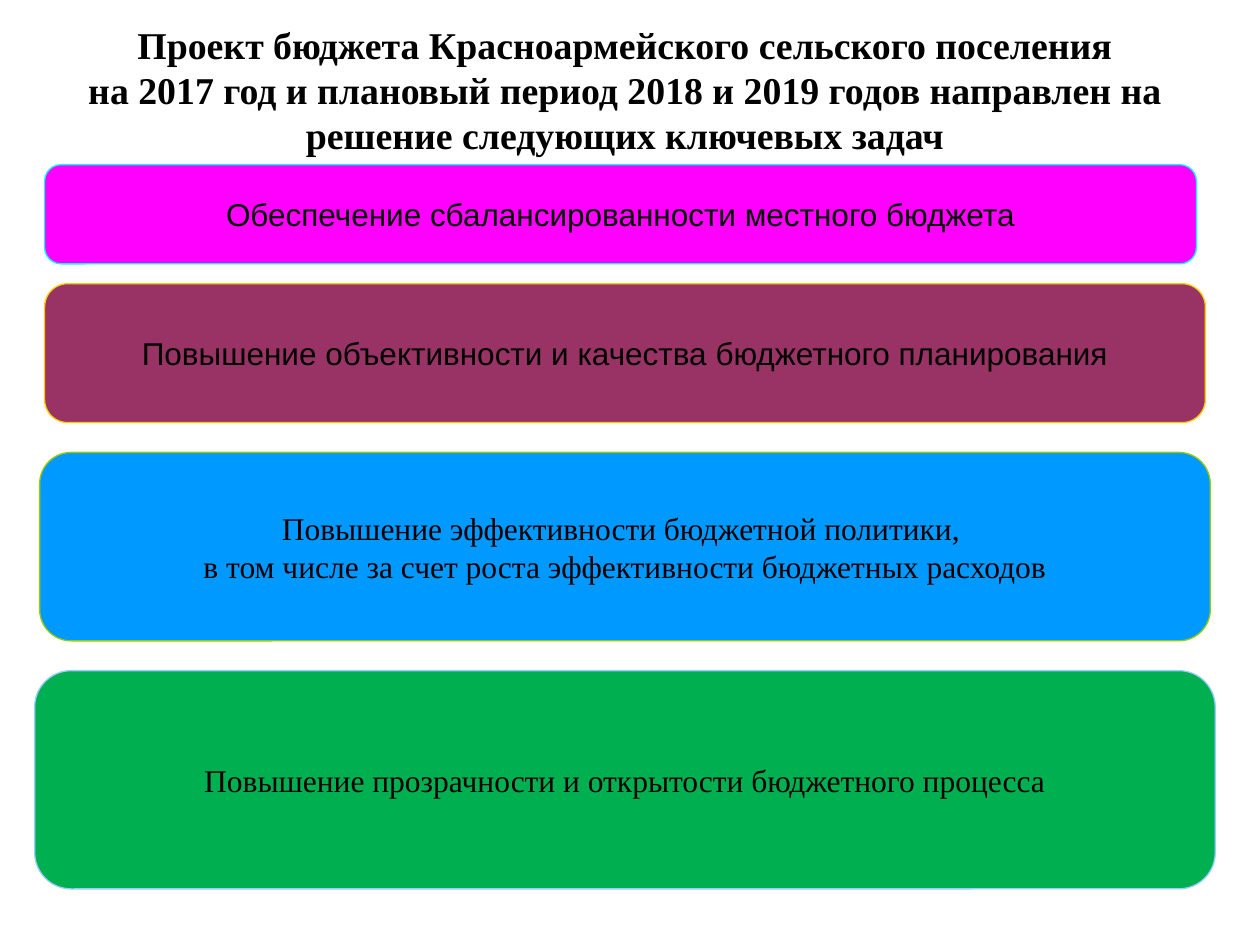
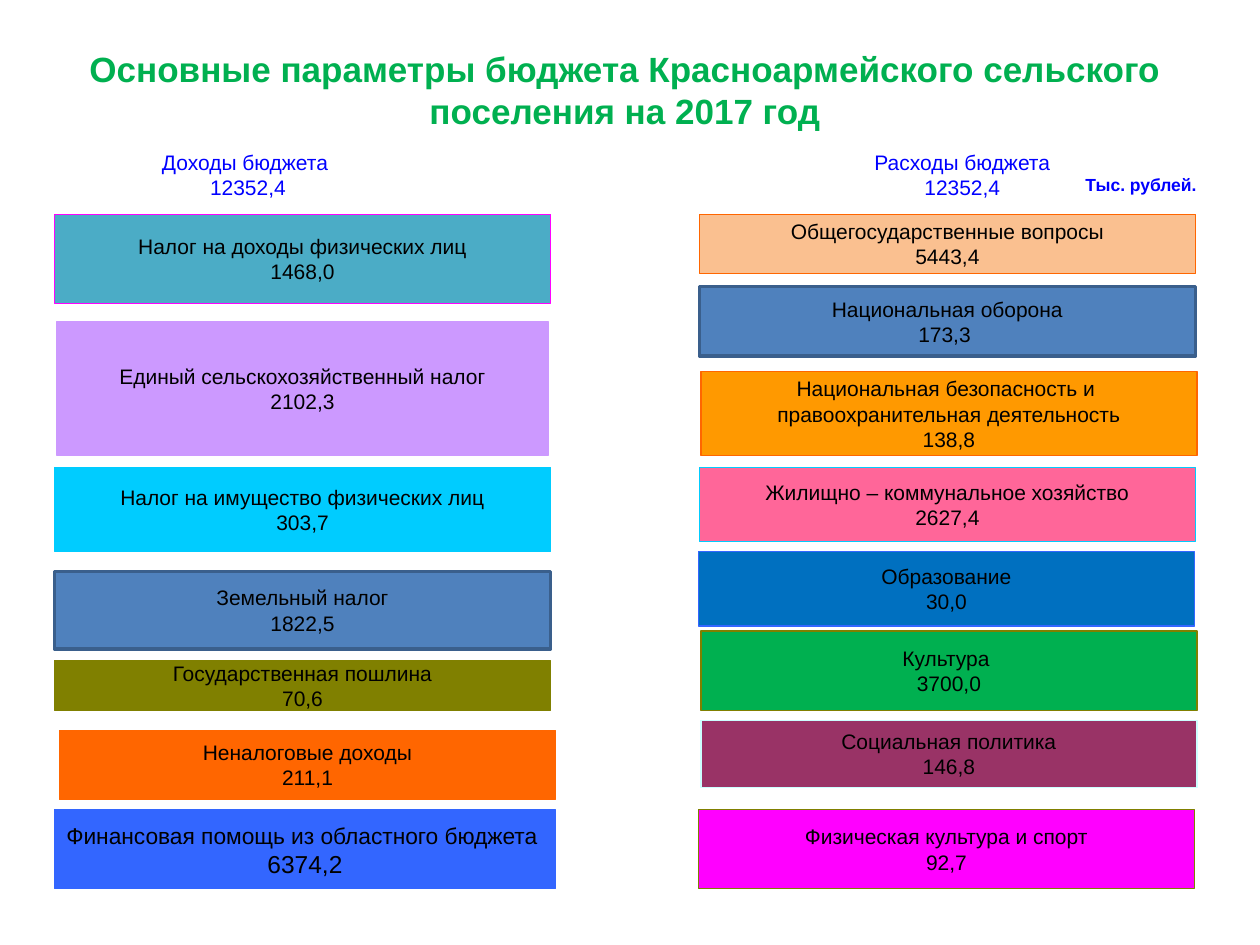
from pptx import Presentation
from pptx import util as u
from pptx.dml.color import RGBColor
from pptx.enum import shapes, text

BLACK = RGBColor(0x00, 0x00, 0x00)
WHITE = RGBColor(0xFF, 0xFF, 0xFF)
BLUE = RGBColor(0x00, 0x00, 0xFF)
GREEN = RGBColor(0x00, 0xB0, 0x50)
MAGENTA = RGBColor(0xFF, 0x00, 0xFF)
AQUA = RGBColor(0x00, 0xFF, 0xFF)
PLUM = RGBColor(0x99, 0x33, 0x66)
GOLD = RGBColor(0xFF, 0xCC, 0x00)
AZURE = RGBColor(0x00, 0x99, 0xFF)
LIME = RGBColor(0x99, 0xCC, 0x00)
PALE_BLUE = RGBColor(0x99, 0xCC, 0xFF)
TEAL = RGBColor(0x4B, 0xAC, 0xC6)
LILAC = RGBColor(0xCC, 0x99, 0xFF)
SKY = RGBColor(0x00, 0xCC, 0xFF)
STEEL = RGBColor(0x4F, 0x81, 0xBD)
STEEL_DARK = RGBColor(0x3A, 0x5F, 0x8C)
OLIVE = RGBColor(0x80, 0x80, 0x00)
ORANGE = RGBColor(0xFF, 0x66, 0x00)
AMBER = RGBColor(0xFF, 0x99, 0x00)
PEACH = RGBColor(0xFA, 0xC0, 0x90)
PINK = RGBColor(0xFF, 0x66, 0x99)
ROYAL = RGBColor(0x33, 0x66, 0xFF)
OCEAN = RGBColor(0x00, 0x70, 0xC0)
ICE = RGBColor(0xCC, 0xFF, 0xFF)

SANS, SERIF = "Arial", "Times New Roman"
TITLE_BOX = (0.7, 0.7, 23.8, 2.2)
RECT = shapes.MSO_SHAPE.RECTANGLE
ROUNDED = shapes.MSO_SHAPE.ROUNDED_RECTANGLE

# Task bars: left, top, width, height, fill, line, font, text lines
TASKS = [
    (0.9, 3.32, 23.22, 2.0, MAGENTA, AQUA, SANS,
     ["Обеспечение сбалансированности местного бюджета"]),
    (0.9, 5.72, 23.4, 2.8, PLUM, GOLD, SANS,
     ["Повышение объективности и качества бюджетного планирования"]),
    (0.8, 9.12, 23.6, 3.8, AZURE, LIME, SERIF,
     ["Повышение эффективности бюджетной политики, ",
      "в том числе за счет роста эффективности бюджетных расходов"]),
    (0.7, 13.52, 23.8, 4.4, GREEN, PALE_BLUE, SERIF,
     ["Повышение прозрачности и открытости бюджетного процесса"]),
]

# Budget items: shift from the column's left, top from the column's top,
# width, height, fill, line, text lines
INCOME = [
    (0, 0, 10, 1.8, TEAL, MAGENTA, ["Налог на доходы физических лиц", "1468,0"]),
    (0.05, 2.16, 9.9, 2.7, LILAC, LILAC, ["Единый сельскохозяйственный налог", "2102,3"]),
    (0, 5.1, 10, 1.7, SKY, SKY, ["Налог на имущество физических лиц", "303,7"]),
    (0, 7.2, 10, 1.56, STEEL, STEEL_DARK, ["Земельный налог", "1822,5"]),
    (0, 9, 10, 1, OLIVE, OLIVE, ["Государственная пошлина", "70,6"]),
    (0.1, 10.4, 10, 1.4, ORANGE, ORANGE, ["Неналоговые доходы", "211,1"]),
    (0, 12, 10.1, 1.6, ROYAL, ROYAL,
     [[("Финансовая помощь из областного бюджета", 13), (" ", 14)], [("6374,2", 14)]]),
]
SPENDING = [
    (0, 0, 10, 1.2, PEACH, ORANGE, ["Общегосударственные вопросы", "5443,4"]),
    (0, 1.46, 10, 1.4, STEEL, STEEL_DARK, ["Национальная оборона", "173,3 "]),
    (0.03, 3.17, 10, 1.7, AMBER, ORANGE,
     ["Национальная безопасность и ", "правоохранительная деятельность", "138,8"]),
    (0, 5.1, 10, 1.5, PINK, SKY, ["Жилищно – коммунальное хозяйство", "2627,4"]),
    (-0.02, 6.8, 10, 1.5, OCEAN, ROYAL, ["Образование", "30,0"]),
    (0.03, 8.4, 10, 1.6, GREEN, OLIVE, ["Культура ", "3700,0"]),
    (0.03, 10.2, 10, 1.35, PLUM, ICE, ["Социальная политика", "146,8"]),
    (-0.02, 12, 10, 1.6, MAGENTA, OLIVE, ["Физическая культура и спорт", "92,7"]),
]


def add_run(p, wording, font, size, color, bold=False):
    r = p.add_run()
    r.text = wording
    r.font.name = font
    r.font.size = u.Pt(size)
    r.font.color.rgb = color
    r.font.bold = bold


def add_title(s, lines, font, size, color):
    tf = s.shapes.add_textbox(*map(u.Cm, TITLE_BOX)).text_frame
    tf.word_wrap = True
    tf.vertical_anchor = text.MSO_ANCHOR.MIDDLE
    p = tf.paragraphs[0]
    p.alignment = text.PP_ALIGN.CENTER
    for i, line in enumerate(lines):
        if i:
            p.add_line_break()
        add_run(p, line, font, size, color, True)


def add_box(s, box, lines, fill, line, kind=RECT, font=SANS, size=12,
            color=BLACK, bold=False):
    """Box with centred lines; a line is a string or a list of (text, size)."""
    sp = s.shapes.add_shape(kind, *map(u.Cm, box))
    sp.shadow.inherit = False
    if fill is None:
        sp.fill.background()
    else:
        sp.fill.solid()
        sp.fill.fore_color.rgb = fill
    sp.line.color.rgb = line
    sp.line.width = u.Pt(2 if line == STEEL_DARK else 0.75)
    tf = sp.text_frame
    tf.word_wrap = False
    tf.vertical_anchor = text.MSO_ANCHOR.MIDDLE
    for i, content in enumerate(lines):
        p = tf.add_paragraph() if i else tf.paragraphs[0]
        p.alignment = text.PP_ALIGN.CENTER
        runs = [(content, size)] if isinstance(content, str) else content
        for wording, run_size in runs:
            add_run(p, wording, font, run_size, color, bold)


def add_budget_column(s, left, top, heading_box, heading, items):
    add_box(s, heading_box, [heading, "12352,4"], WHITE, WHITE, color=BLUE)
    for dx, dy, width, height, fill, line, lines in items:
        add_box(s, (left + dx, top + dy, width, height), lines, fill, line)


def tasks_slide(prs):
    s = prs.slides.add_slide(prs.slide_layouts[6])
    add_title(s, ["Проект бюджета Красноармейского сельского поселения",
                  "на 2017 год и плановый период 2018 и 2019 годов направлен на "
                  "решение следующих ключевых задач"], SERIF, 21.6, BLACK)
    for *box, fill, line, font, lines in TASKS:
        add_box(s, box, lines, fill, line, ROUNDED, font, 18)


def budget_slide(prs):
    s = prs.slides.add_slide(prs.slide_layouts[6])
    add_title(s, ["Основные параметры бюджета Красноармейского сельского "
                  "поселения на 2017 год"], SANS, 20, GREEN)
    # Income on the left, spending on the right
    add_budget_column(s, 1.1, 4.32, (2.1, 2.92, 5.8, 1.2), "Доходы бюджета ", INCOME)
    add_budget_column(s, 14.1, 4.32, (16.7, 2.92, 5.4, 1.2), "Расходы бюджета", SPENDING)
    # Unit note
    add_box(s, (21.5, 3.32, 3, 0.8), ["Тыс. рублей."], None, WHITE,
            size=10, color=BLUE, bold=True)


def main():
    prs = Presentation()
    prs.slide_width, prs.slide_height = u.Cm(25.4), u.Cm(19.05)
    tasks_slide(prs)
    budget_slide(prs)
    prs.save("out.pptx")


if __name__ == "__main__":
    main()
